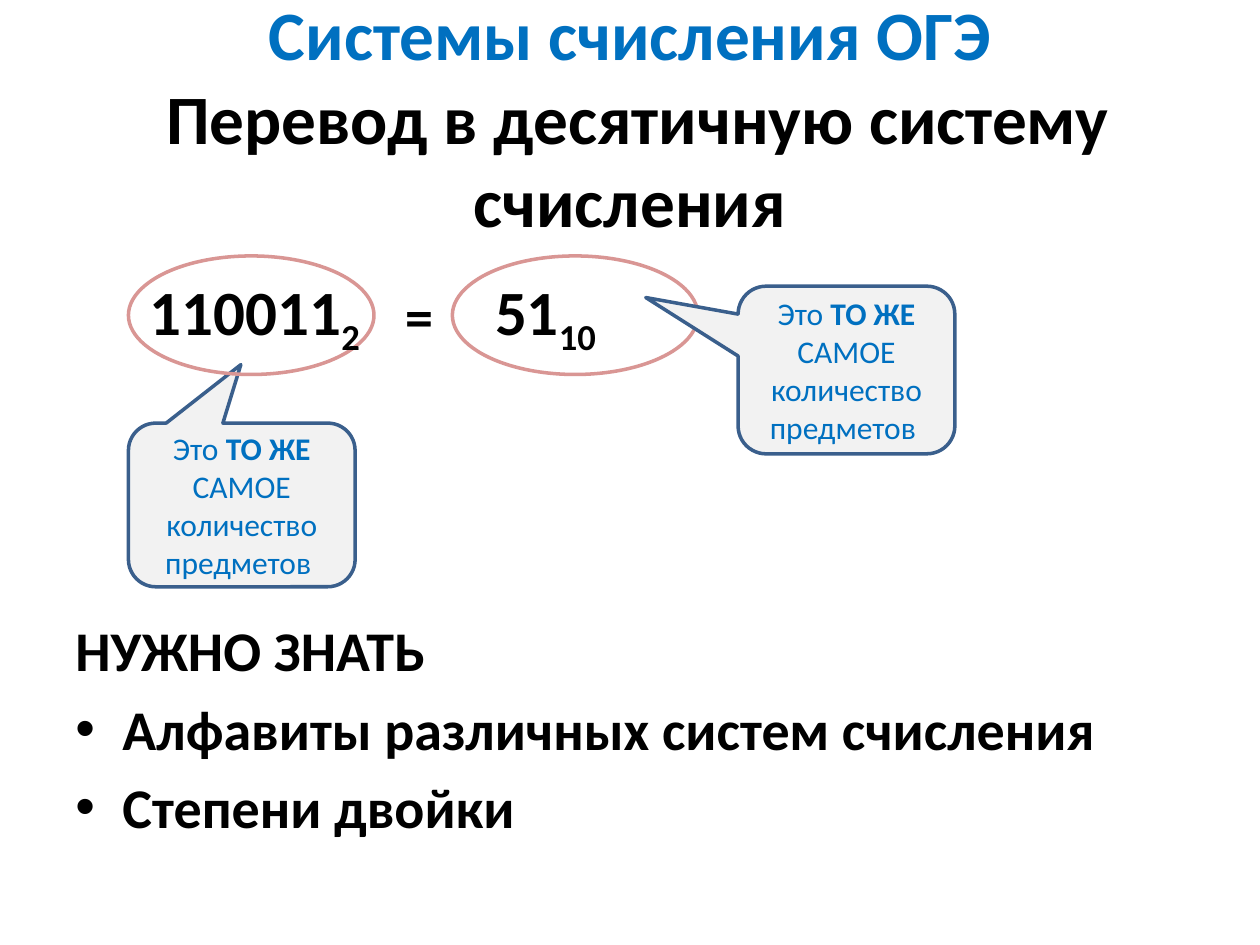
from pptx import Presentation
from pptx.dml.color import RGBColor
from pptx.enum.shapes import MSO_SHAPE
from pptx.enum.text import MSO_ANCHOR, MSO_AUTO_SIZE, PP_ALIGN
from pptx.oxml.ns import qn
from pptx.util import Cm, Pt
from lxml import etree

OVAL = MSO_SHAPE.OVAL
BUBBLE = MSO_SHAPE.ROUNDED_RECTANGULAR_CALLOUT
MIDDLE = MSO_ANCHOR.MIDDLE
CENTER = PP_ALIGN.CENTER
GROW = MSO_AUTO_SIZE.SHAPE_TO_FIT_TEXT

FONT = "Calibri"
BLACK, BLUE = "000000", "0070C0"
ROSE, NAVY, GREY = "D99694", "3A5F8C", "F2F2F2"


def color(code):
    return RGBColor.from_string(code)


def style(font, size, code=BLACK, bold=True):
    font.name, font.size, font.bold = FONT, Pt(size), bold
    font.color.rgb = color(code)


def add_run(para, text):
    run = para.add_run()
    run.text = text
    return run


def add_text(slide, box, wrap=True):
    frame = slide.shapes.add_textbox(*map(Cm, box)).text_frame
    frame.word_wrap = wrap
    return frame


def add_form(slide, kind, box, line, fill=None):
    form = slide.shapes.add_shape(kind, *map(Cm, box))
    form.shadow.inherit = False
    form.line.color.rgb = color(line)
    form.line.width = Pt(2)
    if fill:
        form.fill.solid()
        form.fill.fore_color.rgb = color(fill)
    else:
        form.fill.background()
    return form


def add_title(slide, box):
    frame = add_text(slide, box)
    frame.vertical_anchor = MIDDLE
    para = frame.paragraphs[0]
    para.alignment = CENTER
    style(add_run(para, "Системы счисления ОГЭ").font, 39.6, BLUE)
    para.add_line_break()
    style(add_run(para, " Перевод в десятичную систему счисления").font, 39.6)


def add_number(slide, box, digits, base, wrap=True):
    frame = add_text(slide, box, wrap)
    frame.auto_size = GROW
    para = frame.paragraphs[0]
    style(para.font, 36)
    add_run(para, digits)
    # Subscript with the base of the system
    low = add_run(para, base)
    low.font._element.set("baseline", "-25000")


def add_equals(slide, box):
    frame = add_text(slide, box)
    frame.auto_size = GROW
    para = frame.paragraphs[0]
    add_run(para, "=")
    style(para.font, 32)


def add_bubble(slide, box, tip):
    form = add_form(slide, BUBBLE, box, NAVY, GREY)
    for i, value in enumerate((*tip, 0.167)):
        form.adjustments[i] = value
    frame = form.text_frame
    frame.word_wrap = True
    frame.vertical_anchor = MIDDLE
    para = frame.paragraphs[0]
    para.alignment = CENTER
    parts = (("Это ", False), ("ТО ЖЕ ", True),
             ("САМОЕ количество предметов ", False))
    for text, bold in parts:
        style(add_run(para, text).font, 18, BLUE, bold)


def add_equation(slide, box):
    x, y, w, h = box
    ring = (4.95, 2.39)
    right = x + w - ring[0]
    add_form(slide, OVAL, (right, y, *ring), ROSE)
    # Callouts lie between the two rings
    add_bubble(slide, (x + 12.29, y + 0.61, 4.37, 3.38), (-0.926, -0.432))
    add_bubble(slide, (x, y + 3.37, 4.57, 3.3), (-0.004, -0.857))
    add_form(slide, OVAL, (x, y, *ring), ROSE)
    # Both sides of the equation
    add_number(slide, (x + 0.18, y + 0.2, 4.85, 1.8), "110011", "2", False)
    add_number(slide, (right + 0.61, y + 0.2, 3.18, 1.8), "51", "10")
    add_equals(slide, (x + 5.33, y + 0.4, 2.59, 1.63))


def add_list(slide, box, head, items):
    frame = add_text(slide, box)
    for i, text in enumerate((head, *items)):
        para = frame.add_paragraph() if i else frame.paragraphs[0]
        add_run(para, text)
        props = para._p.get_or_add_pPr()
        props.set("marL", str(Cm(0.95)))
        props.set("indent", str(-Cm(0.95)))
        if i:
            para.space_before = Pt(6.4)
            face = etree.SubElement(props, qn("a:buFont"))
            face.set("typeface", "Arial")
            etree.SubElement(props, qn("a:buChar")).set("char", "•")
        style(para.font, 32)


def main():
    deck = Presentation()
    deck.slide_width, deck.slide_height = Cm(25.4), Cm(19.05)
    slide = deck.slides.add_slide(deck.slide_layouts[6])
    add_title(slide, (1.27, 0.76, 22.86, 3.17))
    add_equation(slide, (2.59, 5.16, 11.48, 2.39))
    add_list(slide, (1.27, 12.29, 22.86, 4.8), "НУЖНО ЗНАТЬ",
             ("Алфавиты различных систем счисления", "Степени двойки"))
    deck.save("out.pptx")


if __name__ == "__main__":
    main()
